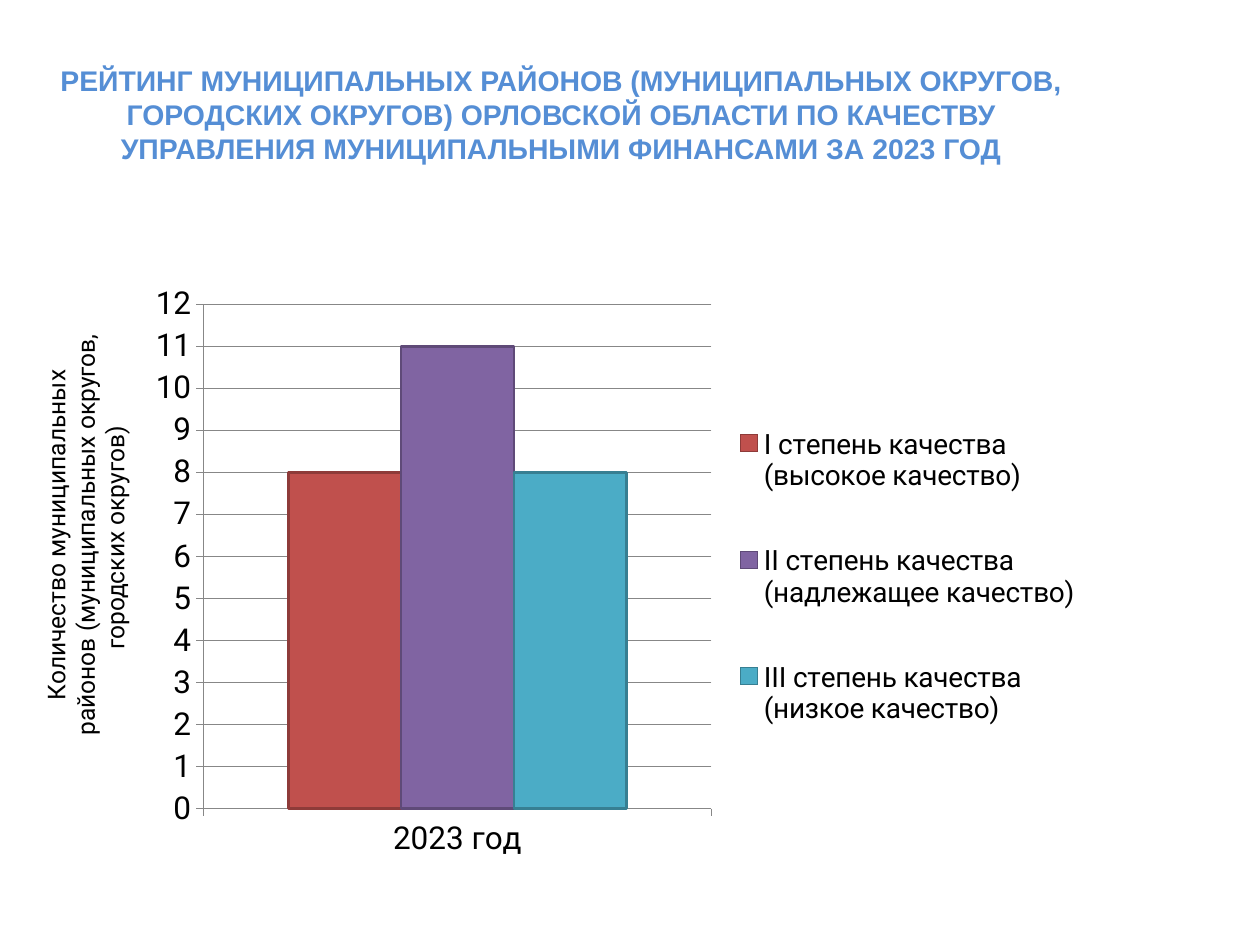
from lxml import etree
from pptx import Presentation
from pptx import util as u
from pptx.chart import data as chart_data
from pptx.dml import color
from pptx.enum import chart as chart_enum
from pptx.enum import text
from pptx.oxml import ns

Pt = u.Pt
BLACK = "000000"
AXIS_GRAY = "878787"


def rgb(value):
    return color.RGBColor.from_string(value)


def set_font(font, size, name="Roboto", fill=BLACK, bold=False):
    font.size = Pt(size)
    font.name = name
    font.bold = bold
    font.color.rgb = rgb(fill)


def set_line(line, fill, width):
    line.color.rgb = rgb(fill)
    line.width = Pt(width)


def add_text(slide, content, box, margins=(7.2, 3.6), rotation=0,
             anchor=text.MSO_ANCHOR.TOP, **font):
    shape = slide.shapes.add_textbox(*map(Pt, box))
    shape.rotation = rotation
    frame = shape.text_frame
    frame.word_wrap = True
    frame.vertical_anchor = anchor
    frame.margin_left = frame.margin_right = Pt(margins[0])
    frame.margin_top = frame.margin_bottom = Pt(margins[1])
    paragraph = frame.paragraphs[0]
    paragraph.alignment = text.PP_ALIGN.CENTER
    run = paragraph.add_run()
    run.text = content
    set_font(run.font, **font)
    return shape


def add_child(parent, tag, value):
    return etree.SubElement(parent, ns.qn(f"c:{tag}"), val=str(value))


def set_layout(element, before, x, y, width, height, inner=False):
    for old in element.findall(ns.qn("c:layout")):
        element.remove(old)
    layout = etree.Element(ns.qn("c:layout"))
    manual = etree.SubElement(layout, ns.qn("c:manualLayout"))
    if inner:
        add_child(manual, "layoutTarget", "inner")
    add_child(manual, "xMode", "edge")
    add_child(manual, "yMode", "edge")
    for tag, value in zip("xywh", (x, y, width, height)):
        add_child(manual, tag, value)
    element.find(ns.qn(f"c:{before}")).addprevious(layout)


def add_title(slide, box):
    shape = add_text(
        slide,
        "РЕЙТИНГ МУНИЦИПАЛЬНЫХ РАЙОНОВ (МУНИЦИПАЛЬНЫХ ОКРУГОВ, "
        "ГОРОДСКИХ ОКРУГОВ) ОРЛОВСКОЙ ОБЛАСТИ ПО КАЧЕСТВУ "
        "УПРАВЛЕНИЯ МУНИЦИПАЛЬНЫМИ ФИНАНСАМИ ЗА 2023 ГОД",
        box, margins=(1, 0), anchor=text.MSO_ANCHOR.BOTTOM,
        size=16.2, name="Arial", fill="558ED5", bold=True)
    shape.fill.solid()
    shape.fill.fore_color.rgb = rgb("FFFFFF")


def add_rating_chart(slide, box):
    ratings = [
        ("I степень качества (высокое качество)", 8, "C0504D", "8E3B39"),
        ("II степень качества (надлежащее качество)", 11, "8064A2", "5F4A78"),
        ("III степень качества (низкое качество)", 8, "4BACC6", "377F92"),
    ]
    data = chart_data.CategoryChartData()
    data.categories = ["2023 год"]
    for name, count, _, _ in ratings:
        data.add_series(name, [count])
    chart = slide.shapes.add_chart(
        chart_enum.XL_CHART_TYPE.COLUMN_CLUSTERED, *map(Pt, box), data).chart
    chart.has_title = False
    set_font(chart.font, 18)

    plot = chart.plots[0]
    plot.vary_by_categories = False
    plot.gap_width = 150
    plot.overlap = 0
    for series, (_, _, fill, outline) in zip(plot.series, ratings):
        series.format.fill.solid()
        series.format.fill.fore_color.rgb = rgb(fill)
        set_line(series.format.line, outline, 1.5)

    for axis in (chart.category_axis, chart.value_axis):
        axis.major_tick_mark = chart_enum.XL_TICK_MARK.OUTSIDE
        axis.minor_tick_mark = chart_enum.XL_TICK_MARK.NONE
        set_line(axis.format.line, AXIS_GRAY, 0.75)
        set_font(axis.tick_labels.font, 18)
    counts = chart.value_axis
    counts.minimum_scale = 0
    counts.maximum_scale = 12
    counts.major_unit = 1
    counts.has_major_gridlines = True
    set_line(counts.major_gridlines.format.line, AXIS_GRAY, 0.75)

    chart.has_legend = True
    legend = chart.legend
    legend.position = chart_enum.XL_LEGEND_POSITION.RIGHT
    legend.include_in_layout = False
    set_font(legend.font, 16)
    plot_area = chart.element.find(".//" + ns.qn("c:plotArea"))
    set_layout(plot_area, "barChart", 0.07, 0.05, 0.53, 0.85, inner=True)
    legend_element = chart.element.find(".//" + ns.qn("c:legend"))
    set_layout(legend_element, "overlay", 0.62, 0.17, 0.37, 0.68)


def add_axis_caption(slide, box):
    add_text(
        slide,
        "Количество муниципальных районов (муниципальных округов, "
        "городских округов) ",
        box, rotation=270, size=14)


def main():
    presentation = Presentation()
    presentation.slide_width = Pt(720)
    presentation.slide_height = Pt(540)
    slide = presentation.slides.add_slide(presentation.slide_layouts[6])
    add_title(slide, (31, 15, 579, 79.5))
    add_rating_chart(slide, (78, 157, 547.5, 339))
    add_axis_caption(slide, (-77, 276.5, 252, 58.3))
    presentation.save("out.pptx")


if __name__ == "__main__":
    main()
